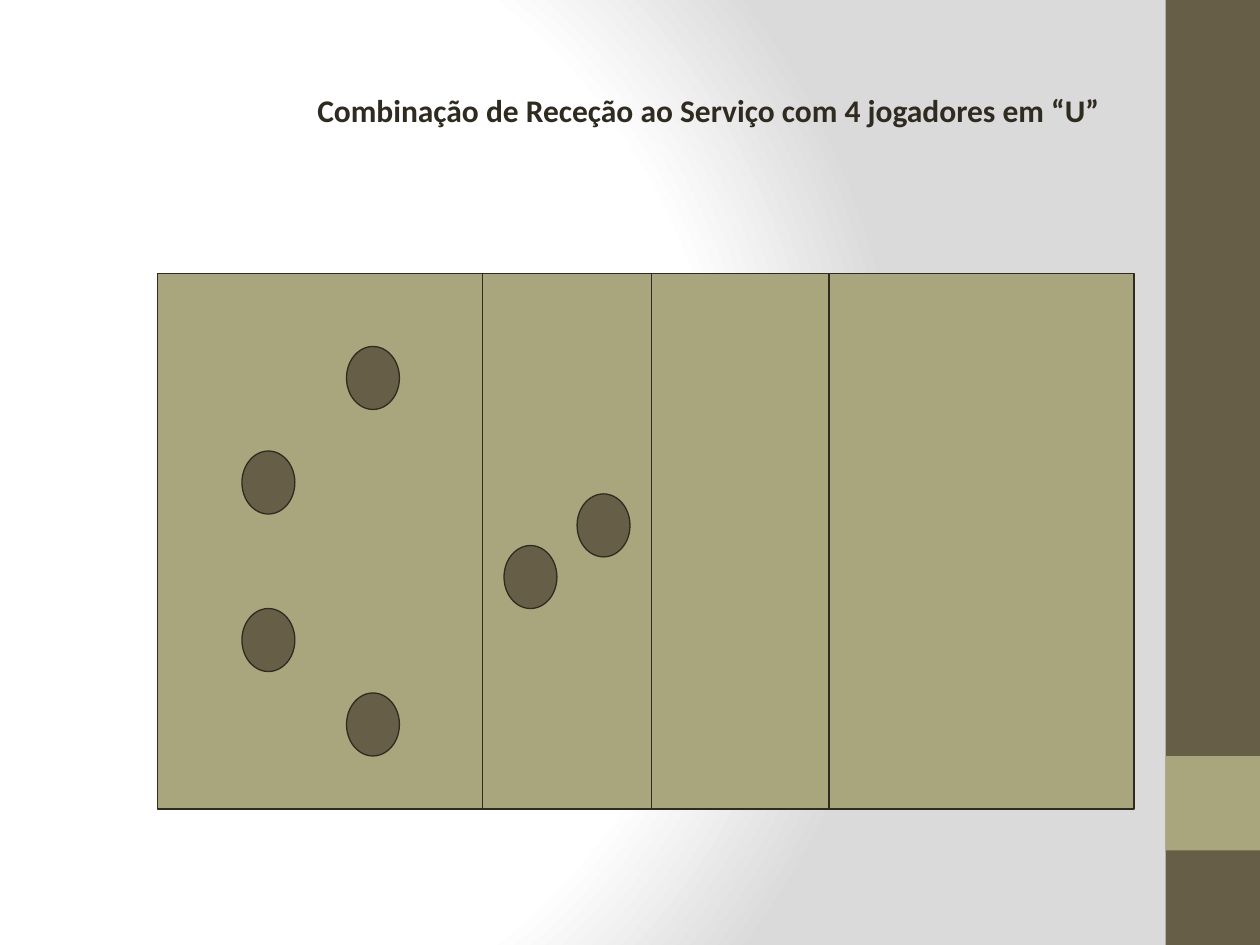
from pptx import Presentation
from pptx.dml.color import RGBColor
from pptx.enum.shapes import MSO_CONNECTOR, MSO_SHAPE
from pptx.enum.text import MSO_AUTO_SIZE
from pptx.oxml import parse_xml
from pptx.oxml.ns import nsdecls, qn
from pptx.util import Inches, Pt
from lxml.etree import SubElement

BROWN = RGBColor(0x67, 0x5E, 0x47)
OLIVE = RGBColor(0xA9, 0xA5, 0x7C)
DARK = RGBColor(0x2F, 0x2B, 0x20)
WHITE = RGBColor(0xFF, 0xFF, 0xFF)
GREY = RGBColor(0xDA, 0xDA, 0xDA)

NET = (2.58, 3.92, 5.33)
TEAM = ((3.33, 1.75), (1.5, 0.58), (0.67, 1.41), (2.75, 2.16), (1.5, 3.33), (0.67, 2.66))


def add_back(slide):
    slide.background.fill.gradient()
    grad = slide.element.find(".//" + qn("a:gradFill"))
    stops = "".join(
        f'<a:gs pos="{pos * 1000}"><a:srgbClr val="{tint}"/></a:gs>'
        for pos, tint in ((0, WHITE), (75, WHITE), (100, GREY))
    )
    grad.getparent().replace(grad, parse_xml(
        f'<a:gradFill {nsdecls("a")} rotWithShape="1"><a:gsLst>{stops}</a:gsLst>'
        '<a:path path="circle"><a:fillToRect l="20000" t="50000" r="100000" b="50000"/>'
        '</a:path></a:gradFill>'
    ))


def add_form(slide, kind, left, top, width, height, fill, edge=None):
    form = slide.shapes.add_shape(
        kind, Inches(left), Inches(top), Inches(width), Inches(height))
    form.shadow.inherit = False
    form.fill.solid()
    form.fill.fore_color.rgb = fill
    if edge is None:
        form.line.fill.background()
    else:
        form.line.color.rgb = edge
        form.line.width = Pt(0.75)


def add_band(slide, left, top, width, height):
    add_form(slide, MSO_SHAPE.RECTANGLE, left, top, width, height, BROWN)
    add_form(slide, MSO_SHAPE.RECTANGLE, left, top + 0.8 * height, width, width, OLIVE)


def add_title(slide, left, top, width, height):
    box = slide.shapes.add_textbox(
        Inches(left), Inches(top), Inches(width), Inches(height))
    frame = box.text_frame
    frame.word_wrap = False
    frame.auto_size = MSO_AUTO_SIZE.SHAPE_TO_FIT_TEXT
    frame.text = "Combinação de Receção ao Serviço com 4 jogadores em “U”"
    font = frame.paragraphs[0].runs[0].font
    font.name = "Calibri"
    font.size = Pt(18)
    font.bold = True
    font.color.rgb = DARK


def add_court(slide, left, top, width, height):
    add_form(slide, MSO_SHAPE.RECTANGLE, left, top, width, height, OLIVE, DARK)
    for x, y in TEAM:
        add_form(slide, MSO_SHAPE.OVAL, left + x, top + y, 0.42, 0.5, BROWN, DARK)
    for x in NET:
        line = slide.shapes.add_connector(
            MSO_CONNECTOR.STRAIGHT, Inches(left + x), Inches(top),
            Inches(left + x), Inches(top + height))
        line.line.color.rgb = DARK
        line.line.width = Pt(0.75)
        SubElement(line.element.spPr, qn("a:effectLst"))


def main():
    deck = Presentation()
    deck.slide_width = Inches(10)
    deck.slide_height = Inches(7.5)
    slide = deck.slides.add_slide(deck.slide_layouts[6])
    add_back(slide)
    add_band(slide, 9.25, 0, 0.75, 7.5)
    add_title(slide, 2.42, 0.67, 6.46, 0.4)
    add_court(slide, 1.25, 2.17, 7.75, 4.25)
    deck.save("out.pptx")


if __name__ == "__main__":
    main()
